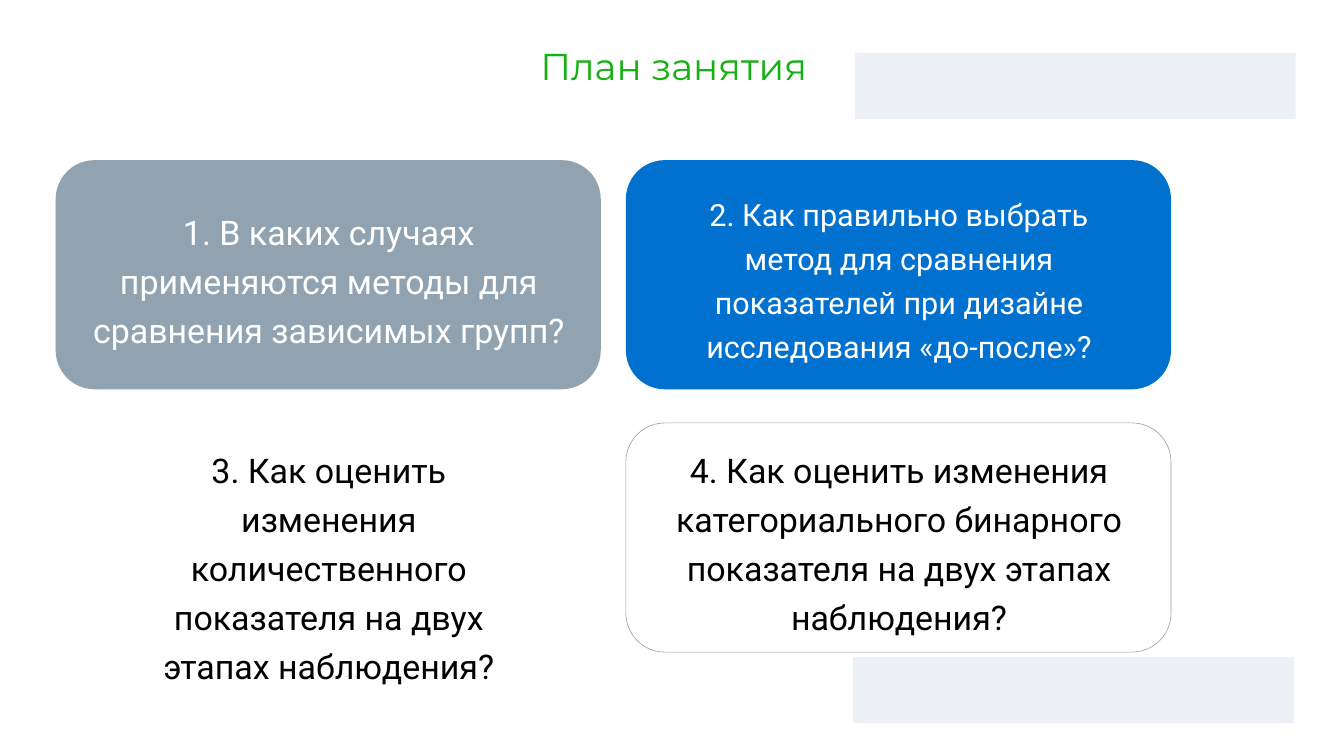
"""Build the lesson plan slide: a title, two bands and a two-by-two grid of cards."""
from dataclasses import dataclass
from typing import Optional

from pptx import Presentation
from pptx.dml.color import RGBColor
from pptx.enum.shapes import MSO_SHAPE
from pptx.enum.text import MSO_ANCHOR, MSO_AUTO_SIZE, PP_ALIGN
from pptx.shapes.autoshape import Shape
from pptx.slide import Slide
from pptx.util import Inches, Pt

PALE = RGBColor(0xED, 0xF1, 0xF5)
GREY = RGBColor(0x91, 0xA3, 0xB0)
BLUE = RGBColor(0x00, 0x71, 0xCE)
GREEN = RGBColor(0x15, 0xB0, 0x12)
WHITE = RGBColor(0xFF, 0xFF, 0xFF)
BLACK = RGBColor(0x00, 0x00, 0x00)

WIDTH, HEIGHT = 21.99, 12.37
LEFT, TOP = 0.91, 2.62
CARD_W, CARD_H = 8.92, 3.75
STEP_X, STEP_Y = 9.33, 4.3
BAND_W, BAND_H = 7.21, 1.08


@dataclass(frozen=True)
class Box:
    left: float
    top: float
    width: float
    height: float


@dataclass(frozen=True)
class Card:
    col: int
    row: int
    text: str
    width: float
    drop: float
    height: float
    size: int
    ink: RGBColor
    fill: Optional[RGBColor] = None
    line: Optional[RGBColor] = None

    def frame(self) -> Box:
        return Box(LEFT + self.col * STEP_X, TOP + self.row * STEP_Y, CARD_W, CARD_H)

    def label(self) -> Box:
        card = self.frame()
        inset = (CARD_W - self.width) / 2
        return Box(card.left + inset, card.top + self.drop, self.width, self.height)


CARDS = (
    Card(0, 0, "1. В каких случаях применяются методы для сравнения зависимых групп?",
         8.08, 0.69, 2.39, 40, WHITE, fill=GREY),
    Card(1, 0, "2. Как правильно выбрать метод для сравнения показателей при дизайне "
               "исследования «до-после»?",
         7.02, 0.45, 2.86, 36, WHITE, fill=BLUE),
    Card(0, 1, "3. Как оценить изменения количественного показателя на двух этапах "
               "наблюдения?",
         6.85, 0.29, 3.18, 40, BLACK, fill=WHITE),
    Card(1, 1, "4. Как оценить изменения категориального бинарного показателя на двух "
               "этапах наблюдения?",
         7.63, 0.29, 3.25, 40, BLACK, line=GREY),
)
TITLE = Box(5.19, 0.68, 11.67, 0.76)
UPPER = Box(13.99, 0.87, BAND_W, BAND_H)
LOWER = Box(13.96, 10.75, BAND_W, BAND_H)


def place(box: Box) -> tuple:
    return tuple(Inches(n) for n in (box.left, box.top, box.width, box.height))


def draw(slide: Slide, kind: MSO_SHAPE, box: Box, fill: Optional[RGBColor],
         line: Optional[RGBColor] = None) -> Shape:
    shape = slide.shapes.add_shape(kind, *place(box))
    shape.shadow.inherit = False
    if fill is None:
        shape.fill.background()
    else:
        shape.fill.solid()
        shape.fill.fore_color.rgb = fill
    if line is None:
        shape.line.fill.background()
    else:
        shape.line.color.rgb = line
        shape.line.width = Pt(0.75)
    return shape


def write(slide: Slide, box: Box, text: str, face: str, size: int, ink: RGBColor,
          pitch: float = 1.0, indent: float = 0) -> None:
    frame = slide.shapes.add_textbox(*place(box)).text_frame
    frame.word_wrap = True
    frame.auto_size = MSO_AUTO_SIZE.SHAPE_TO_FIT_TEXT
    frame.vertical_anchor = MSO_ANCHOR.TOP
    frame.margin_left = Inches(indent)
    frame.margin_right = frame.margin_bottom = 0
    frame.margin_top = Inches(0.02)
    para = frame.paragraphs[0]
    para.text = text
    para.alignment = PP_ALIGN.CENTER
    para.line_spacing = pitch
    para.font.name = face
    para.font.size = Pt(size)
    para.font.color.rgb = ink


def main() -> None:
    deck = Presentation()
    deck.slide_width, deck.slide_height = Inches(WIDTH), Inches(HEIGHT)
    slide = deck.slides.add_slide(deck.slide_layouts[6])
    draw(slide, MSO_SHAPE.RECTANGLE, UPPER, PALE)
    for card in CARDS:
        shape = draw(slide, MSO_SHAPE.ROUNDED_RECTANGLE, card.frame(), card.fill, card.line)
        shape.adjustments[0] = 0.17
    for card in CARDS:
        write(slide, card.label(), card.text, "Roboto", card.size, card.ink, 1.2, 0.02)
    write(slide, TITLE, "План занятия", "Montserrat", 44, GREEN)
    draw(slide, MSO_SHAPE.RECTANGLE, LOWER, PALE)
    deck.save("out.pptx")


if __name__ == "__main__":
    main()
